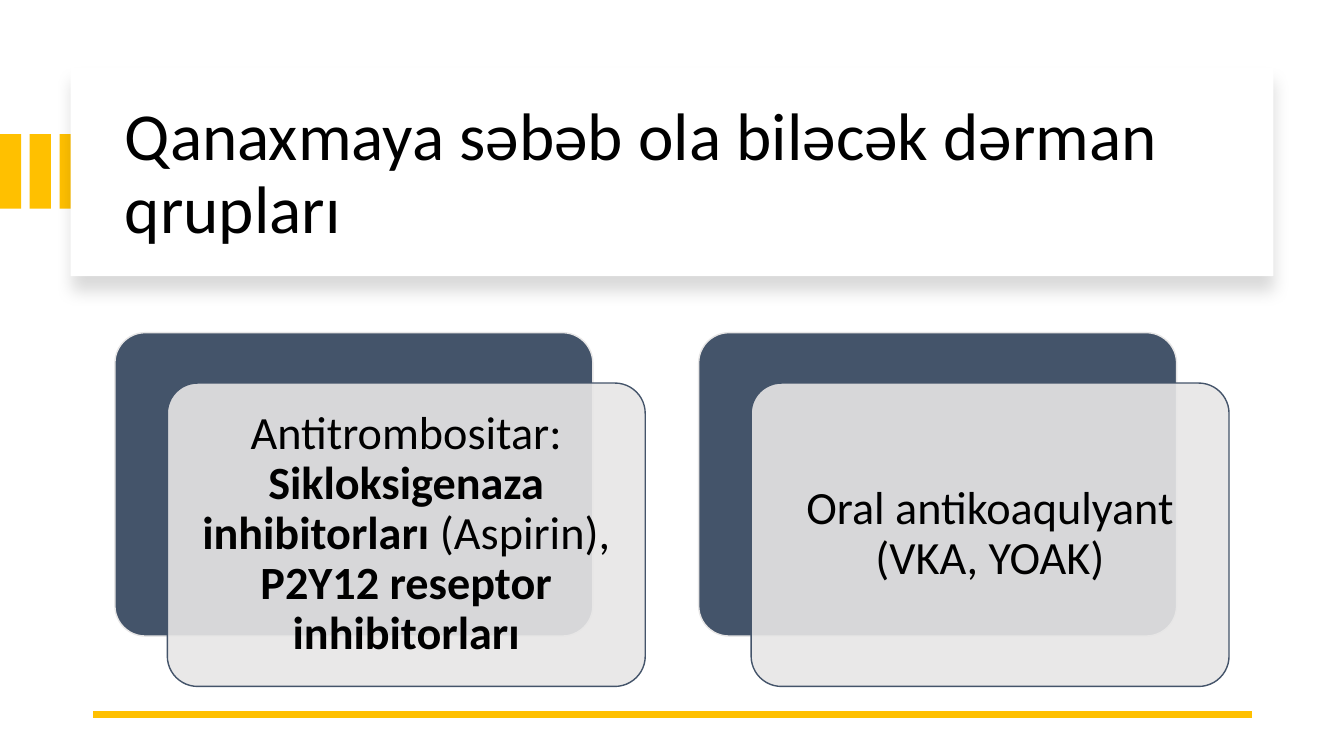
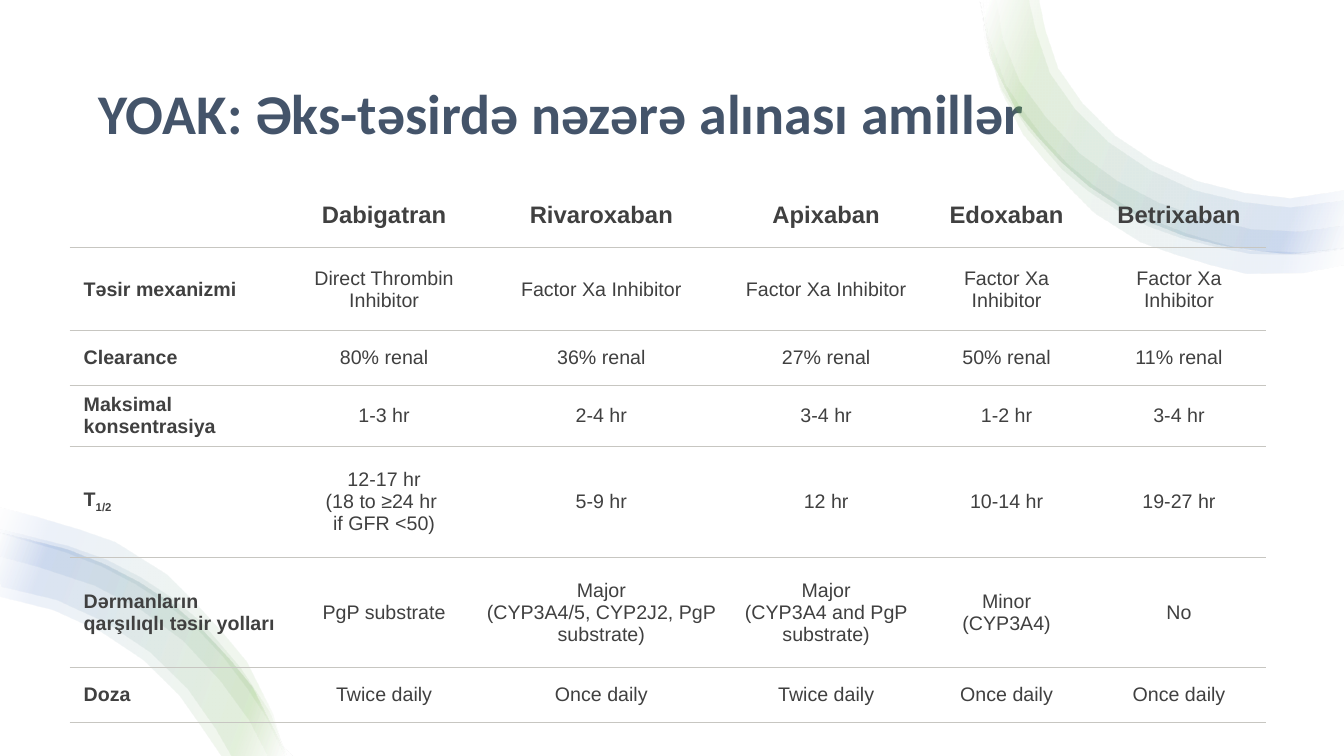
import dataclasses
import itertools
import math
import typing

import pptx
import pptx.dml.color
import pptx.enum.shapes
import pptx.enum.text
import pptx.oxml
import pptx.oxml.ns
import pptx.util

Inches = pptx.util.Inches
Pt = pptx.util.Pt
MIDDLE = pptx.enum.text.MSO_ANCHOR.MIDDLE
CENTER = pptx.enum.text.PP_ALIGN.CENTER
LEFT = pptx.enum.text.PP_ALIGN.LEFT
SHAPES = pptx.enum.shapes.MSO_SHAPE
NS = pptx.oxml.ns.nsdecls("a")

WIDTH, HEIGHT = 13.33, 7.5
GOLD, SLATE, MIST, WHITE = "FFC000", "44546A", "E7E6E6", "FFFFFF"
INK, GRAPHITE, RULE = "000000", "404040", "C7C6C1"
GREEN, BLUE = "70AD47", "4472C4"
PLAIN_TABLE = "{2D5ABB26-0587-4C30-8999-92F81FD0307C}"

Point = tuple[float, float]


@dataclasses.dataclass(frozen=True)
class Box:
    left: float
    top: float
    width: float
    height: float

    def lengths(self) -> list:
        return [Inches(side) for side in dataclasses.astuple(self)]


@dataclasses.dataclass(frozen=True)
class Piece:
    text: str
    bold: bool = False
    baseline: int = 0


@dataclasses.dataclass(frozen=True)
class DrugGroup:
    left: float
    pieces: list[Piece]


@dataclasses.dataclass(frozen=True)
class Band:
    outer: list[Point]
    inner: list[Point]


@dataclasses.dataclass(frozen=True)
class Placement:
    scale: float
    shift: Point
    angle: int


GROUP_TOP = 3.3
GROUPS = [
    DrugGroup(1.14, [
        Piece("Antitrombositar: "),
        Piece("Sikloksigenaza inhibitorları ", True),
        Piece("(Aspirin),"),
        Piece(" P2Y12 reseptor inhibitorları", True),
    ]),
    DrugGroup(6.93, [Piece("Oral antikoaqulyant (VKA, YOAK)")]),
]

RIM = [(9.73, -0.01), (9.83, 0.58), (10.09, 1.1), (10.8, 1.84), (11.74, 2.33),
       (12.79, 2.51), (13.34, 2.45)]
BANDS = [
    Band(RIM, [(13.34, 1.88), (12.79, 1.96), (11.87, 1.79), (11.06, 1.34),
               (10.5, 0.68), (10.31, -0.01)]),
    Band(RIM, [(13.34, 1.98), (12.79, 2.05), (11.84, 1.88), (11, 1.41),
               (10.42, 0.73), (10.21, -0.01)]),
    Band([(9.73, -0.01), (9.78, 0.43), (9.94, 0.89), (10.54, 1.68), (11.39, 2.24),
          (12.39, 2.51), (12.91, 2.52), (13.34, 2.46)],
         [(13.34, 2.23), (12.89, 2.29), (12.42, 2.27), (11.5, 2.01), (10.71, 1.52),
          (10.12, 0.81), (9.95, 0.39), (9.89, -0.01)]),
    Band([(9.71, -0.01), (9.91, 0.87), (10.14, 1.33), (10.85, 2.11), (11.31, 2.4),
          (12.36, 2.71), (12.92, 2.7), (13.34, 2.62)],
         [(13.34, 2.45), (12.9, 2.5), (12.39, 2.48), (11.43, 2.18), (10.59, 1.63),
          (9.97, 0.84), (9.8, 0.37), (9.74, -0.01)]),
]
RINGS = [Placement(1, (0, 0), 20), Placement(-1.11, (13.7, 8.04), 200)]

COLUMNS = [2.22, 1.77, 2.54, 1.92, 1.66, 1.76]
ROWS = [0.66, 0.82, 0.54, 0.58, 1.1, 1.1, 0.54]
XA = "Factor Xa Inhibitor"
DRUGS = [
    ["", "Dabigatran", "Rivaroxaban", "Apixaban", "Edoxaban", "Betrixaban"],
    ["Təsir mexanizmi", "Direct Thrombin Inhibitor", XA, XA, XA, XA],
    ["Clearance", "80% renal", "36% renal", "27% renal", "50% renal", "11% renal"],
    ["Maksimal konsentrasiya", "1-3 hr", "2-4 hr", "3-4 hr", "1-2 hr", "3-4 hr"],
    ["T|1/2", "12-17 hr\n(18 to ≥24 hr \nif GFR <50)", "5-9 hr", "12 hr",
     "10-14 hr", "19-27 hr"],
    ["Dərmanların qarşılıqlı təsir yolları", "PgP substrate",
     "Major\n(CYP3A4/5, CYP2J2, PgP substrate)",
     "Major\n(CYP3A4 and PgP substrate)", "Minor\n(CYP3A4)", "No"],
    ["Doza", "Twice daily", "Once daily", "Twice daily", "Once daily", "Once daily"],
]


def color(code: str) -> pptx.dml.color.RGBColor:
    return pptx.dml.color.RGBColor.from_string(code)


def assign(target: typing.Any, values: dict[str, typing.Any]) -> None:
    for name, value in values.items():
        setattr(target, name, value)


def write(paragraph, pieces: list[Piece], font: str, size: float, code: str,
          layout: dict[str, typing.Any]) -> None:
    assign(paragraph, layout)
    for piece in pieces:
        run = paragraph.add_run()
        run.text = piece.text
        assign(run.font, {"name": font, "size": Pt(size), "bold": piece.bold})
        run.font.color.rgb = color(code)
        if piece.baseline:
            run._r.get_or_add_rPr().set("baseline", str(piece.baseline * 1000))


def add_title(slide, box: Box, title: Piece, size: float, code: str) -> None:
    frame = slide.shapes.add_textbox(*box.lengths()).text_frame
    assign(frame, {"word_wrap": True, "vertical_anchor": MIDDLE})
    write(frame.paragraphs[0], [title], "Calibri", size, code, {"line_spacing": 0.9})


def add_block(slide, kind, box: Box, fill: str, outline: str = ""):
    block = slide.shapes.add_shape(kind, *box.lengths())
    block.shadow.inherit = False
    block.fill.solid()
    block.fill.fore_color.rgb = color(fill)
    if outline:
        block.line.color.rgb = color(outline)
        block.line.width = Pt(1)
    else:
        block.line.fill.background()
    return block


def add_title_card(slide) -> None:
    for index in range(3):
        add_block(slide, SHAPES.RECTANGLE, Box(0.295 * index, 1.33, 0.21, 0.74), GOLD)
    card = add_block(slide, SHAPES.RECTANGLE, Box(0.7, 0.67, 11.93, 2.07), WHITE)
    effects = card._element.spPr.find(pptx.oxml.ns.qn("a:effectLst"))
    effects.append(pptx.oxml.parse_xml(
        f'<a:outerShdw {NS} blurRad="{Pt(11)}" dist="{Pt(10)}" dir="5400000" '
        f'algn="t" rotWithShape="0"><a:srgbClr val="{INK}"><a:alpha val="15000"/>'
        '</a:srgbClr></a:outerShdw>'))


def add_base_line(slide) -> None:
    base = slide.shapes.add_connector(
        pptx.enum.shapes.MSO_CONNECTOR.STRAIGHT,
        Inches(12.42), Inches(7.09), Inches(0.92), Inches(7.09))
    base.line.color.rgb = color(GOLD)
    base.line.width = Pt(4.5)
    base._element.spPr.append(pptx.oxml.parse_xml(f"<a:effectLst {NS}/>"))


def add_group(slide, group: DrugGroup) -> None:
    back = Box(group.left, GROUP_TOP, 4.74, 3.01)
    front = dataclasses.replace(back, left=group.left + 0.52, top=GROUP_TOP + 0.5)
    add_block(slide, SHAPES.ROUNDED_RECTANGLE, back, SLATE, MIST).adjustments[0] = 0.1
    panel = add_block(slide, SHAPES.ROUNDED_RECTANGLE, front, MIST, SLATE)
    panel.adjustments[0] = 0.1
    tint = panel._element.spPr.find(pptx.oxml.ns.qn("a:solidFill"))[0]
    tint.append(pptx.oxml.parse_xml(f'<a:alpha {NS} val="90000"/>'))
    frame = panel.text_frame
    inset = Inches(0.14)
    assign(frame, {"word_wrap": True, "vertical_anchor": MIDDLE,
                   "margin_left": inset, "margin_right": inset,
                   "margin_top": inset, "margin_bottom": inset})
    write(frame.paragraphs[0], group.pieces, "Calibri", 33, INK,
          {"alignment": CENTER, "line_spacing": 0.9})


def smooth(knots: list[Point], spacing: float = 0.4) -> list[Point]:
    padded = [knots[0], *knots, knots[-1]]
    curve = []
    for index, (start, end) in enumerate(itertools.pairwise(knots)):
        quad = list(zip(*padded[index:index + 4]))
        steps = max(1, round(math.dist(start, end) / spacing))
        for step in range(steps):
            t = step / steps
            curve.append(tuple(
                0.5 * (2 * b + (c - a) * t + (2 * a - 5 * b + 4 * c - d) * t ** 2
                       + (3 * b - a - 3 * c + d) * t ** 3)
                for a, b, c, d in quad))
    return [*curve, knots[-1]]


def add_band(slide, band: Band, place: Placement) -> None:
    outline = []
    for point in smooth(band.outer) + smooth(band.inner):
        spots = [offset + place.scale * value
                 for offset, value in zip(place.shift, point)]
        outline.append(tuple(Inches(min(max(spot, 0), limit))
                             for spot, limit in zip(spots, (WIDTH, HEIGHT))))
    builder = slide.shapes.build_freeform(*outline[0], scale=1.0)
    builder.add_line_segments(outline[1:], close=True)
    arc = builder.convert_to_shape()
    arc.shadow.inherit = False
    arc.line.fill.background()
    arc.fill.background()
    stops = "".join(
        f'<a:gs pos="{position}000"><a:srgbClr val="{code}"><a:alpha val="10000"/>'
        '</a:srgbClr></a:gs>'
        for position, code in [(2, WHITE), (16, GREEN), (85, BLUE), (100, WHITE)])
    properties = arc._element.spPr
    properties.replace(
        properties.find(pptx.oxml.ns.qn("a:noFill")),
        pptx.oxml.parse_xml(
            f'<a:gradFill {NS} rotWithShape="1"><a:gsLst>{stops}</a:gsLst>'
            f'<a:lin ang="{place.angle * 60000}" scaled="0"/></a:gradFill>'))


def rule_below(cell) -> None:
    cell._tc.get_or_add_tcPr().insert(0, pptx.oxml.parse_xml(
        f'<a:lnB {NS} w="{Pt(0.75)}"><a:solidFill><a:srgbClr val="{RULE}"/>'
        '</a:solidFill></a:lnB>'))


def add_drug_table(slide) -> None:
    box = Box(0.69, 1.8, sum(COLUMNS), sum(ROWS))
    table = slide.shapes.add_table(len(ROWS), len(COLUMNS), *box.lengths()).table
    assign(table, {"first_row": False, "horz_banding": False})
    table._tbl.tblPr.find(pptx.oxml.ns.qn("a:tableStyleId")).text = PLAIN_TABLE
    for column, width in zip(table.columns, COLUMNS):
        column.width = Inches(width)
    for row, height in zip(table.rows, ROWS):
        row.height = Inches(height)
    for r, c in itertools.product(range(len(ROWS)), range(len(COLUMNS))):
        cell = table.cell(r, c)
        assign(cell, {"vertical_anchor": MIDDLE,
                      "margin_left": Inches(0.14), "margin_right": Inches(0.11),
                      "margin_top": Inches(0.07), "margin_bottom": Inches(0.07)})
        cell.fill.background()
        rule_below(cell)
        if not DRUGS[r][c]:
            continue
        frame = cell.text_frame
        for index, line in enumerate(DRUGS[r][c].split("\n")):
            paragraph = frame.add_paragraph() if index else frame.paragraphs[0]
            pieces = [Piece(text, r == 0 or c == 0, -25 * level)
                      for level, text in enumerate(line.split("|"))]
            write(paragraph, pieces, "Arial", 14 if r else 17, GRAPHITE,
                  {"alignment": CENTER if c else LEFT})


def main() -> None:
    deck = pptx.Presentation()
    assign(deck, {"slide_width": Inches(WIDTH), "slide_height": Inches(HEIGHT)})
    groups_slide, factors_slide = (
        deck.slides.add_slide(deck.slide_layouts[6]) for _ in range(2))

    add_title_card(groups_slide)
    add_title(groups_slide, Box(1.14, 0.89, 11.13, 1.7),
              Piece("Qanaxmaya səbəb ola biləcək dərman qrupları"), 48, INK)
    add_base_line(groups_slide)
    for group in GROUPS:
        add_group(groups_slide, group)

    add_title(factors_slide, Box(0.88, 0.5, 11.57, 1.3),
              Piece("YOAK: Əks-təsirdə nəzərə alınası amillər", True), 40, SLATE)
    for place, band in itertools.product(RINGS, BANDS):
        add_band(factors_slide, band, place)
    add_drug_table(factors_slide)
    deck.save("out.pptx")


if __name__ == "__main__":
    main()
